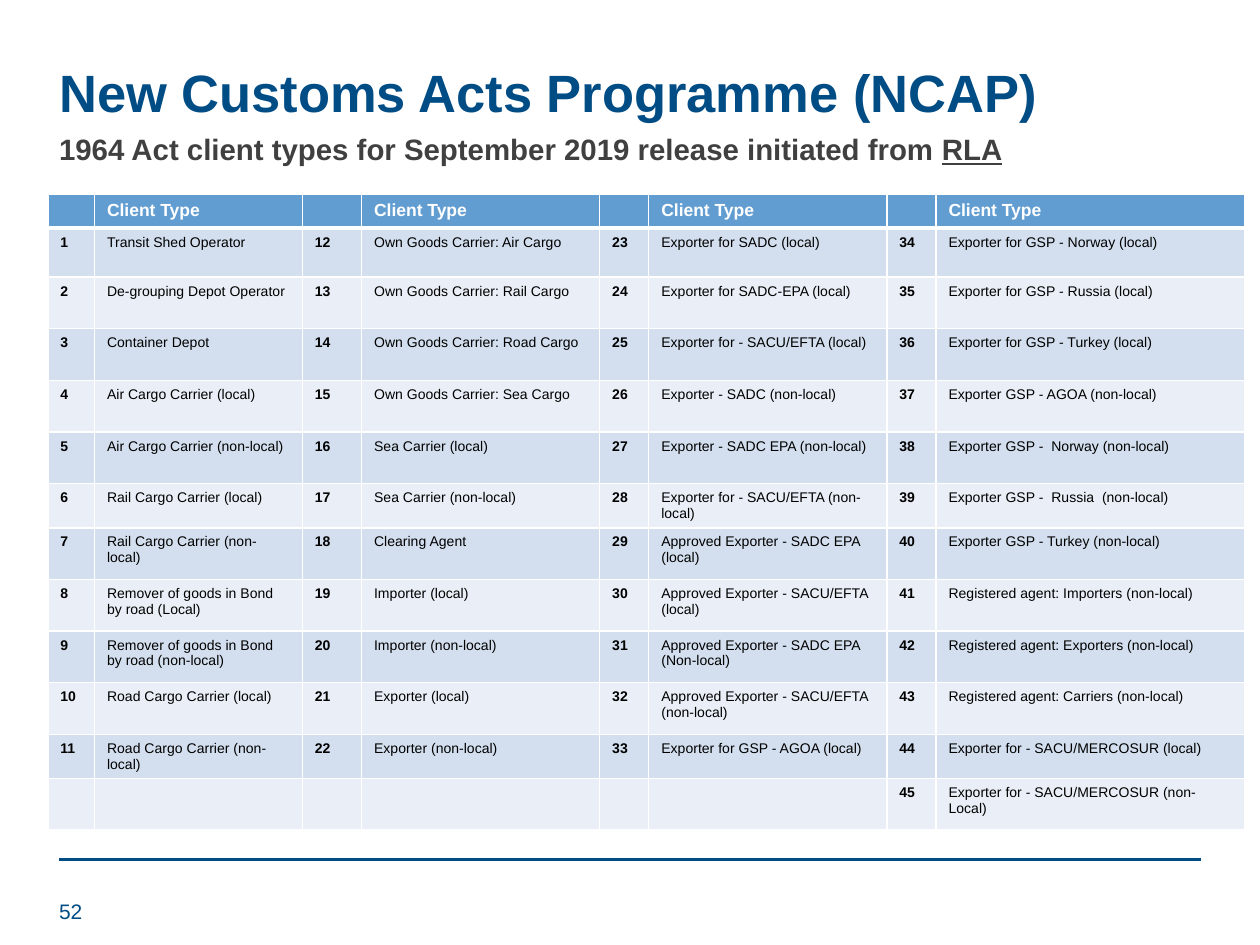
from lxml import etree
from pptx import Presentation
from pptx.dml.color import RGBColor
from pptx.enum import shapes, text
from pptx.oxml.ns import qn
from pptx.util import Inches, Pt

NAVY = RGBColor(0x00, 0x4C, 0x85)
GREY = RGBColor(0x40, 0x40, 0x40)
BLACK = RGBColor(0x00, 0x00, 0x00)
WHITE = RGBColor(0xFF, 0xFF, 0xFF)
HEADER_BLUE = RGBColor(0x62, 0x9D, 0xD1)
BAND_DARK = RGBColor(0xD3, 0xDF, 0xEE)
BAND_LIGHT = RGBColor(0xEA, 0xEF, 0xF7)

COLUMN_WIDTHS = [0.37, 1.65, 0.47, 1.89, 0.39, 1.89, 0.39, 2.45]
HEADER_HEIGHT, FIRST_HEIGHT, ROW_HEIGHT, TIGHT_HEIGHT = 0.24, 0.39, 0.41, 0.35
TIGHT_ROWS = (6, 11)

CLIENT_TYPES = [
    ["Transit Shed Operator", "De-grouping Depot Operator", "Container Depot",
     "Air Cargo Carrier (local)", "Air Cargo Carrier (non-local)",
     "Rail Cargo Carrier (local)", "Rail Cargo Carrier (non-local)",
     "Remover of goods in Bond  by road (Local)",
     "Remover of goods in Bond by road (non-local)",
     "Road Cargo Carrier (local)", "Road Cargo Carrier (non-local)"],
    ["Own Goods Carrier: Air Cargo", "Own Goods Carrier: Rail Cargo",
     "Own Goods Carrier: Road Cargo", "Own Goods Carrier: Sea Cargo",
     "Sea Carrier (local)", "Sea Carrier (non-local)", "Clearing Agent",
     "Importer (local)", "Importer (non-local)",
     "Exporter (local)", "Exporter (non-local)"],
    ["Exporter for SADC (local)", "Exporter for SADC-EPA (local)",
     "Exporter for - SACU/EFTA (local)", "Exporter - SADC (non-local)",
     "Exporter - SADC EPA (non-local)", "Exporter for - SACU/EFTA (non-local)",
     "Approved Exporter - SADC EPA (local)",
     "Approved Exporter - SACU/EFTA (local)",
     "Approved Exporter - SADC EPA (Non-local)",
     "Approved Exporter - SACU/EFTA  (non-local)",
     "Exporter for GSP - AGOA (local)"],
    ["Exporter for GSP - Norway (local)", "Exporter for GSP - Russia (local)",
     "Exporter for GSP - Turkey (local)", "Exporter GSP - AGOA (non-local)",
     "Exporter GSP -  Norway (non-local)", "Exporter GSP -  Russia  (non-local)",
     "Exporter GSP - Turkey (non-local)",
     "Registered agent: Importers (non-local)",
     "Registered agent: Exporters (non-local)",
     "Registered agent: Carriers (non-local)",
     "Exporter for - SACU/MERCOSUR (local)",
     "Exporter for - SACU/MERCOSUR (non-Local)"],
]


def add_run(paragraph, wording, size, color, bold=False, underline=None):
    run = paragraph.add_run()
    run.text = wording
    font = run.font
    font.name, font.size, font.bold = "Arial", Pt(size), bold
    font.underline = underline
    font.color.rgb = color


def prepare_frame(holder, left, top, width, height, anchor=text.MSO_ANCHOR.TOP,
                  line_spacing=None):
    """Place a text holder and return its first paragraph, ready for runs."""
    holder.left, holder.top = Inches(left), Inches(top)
    holder.width, holder.height = Inches(width), Inches(height)
    frame = holder.text_frame
    frame.word_wrap = True
    frame.auto_size = text.MSO_AUTO_SIZE.NONE
    frame.vertical_anchor = anchor
    paragraph = frame.paragraphs[0]
    paragraph.alignment = text.PP_ALIGN.LEFT
    paragraph.line_spacing = line_spacing
    return paragraph


def set_borders(cell, top, bottom):
    """Draw white cell borders; top and bottom are widths in points."""
    properties = cell._tc.get_or_add_tcPr()
    for side, width in (("L", 1), ("R", 1), ("T", top), ("B", bottom)):
        line = etree.SubElement(properties, qn(f"a:ln{side}"), w=str(Pt(width)))
        fill = etree.SubElement(line, qn("a:solidFill"))
        etree.SubElement(fill, qn("a:srgbClr"), val=str(WHITE))


def fill_cell(cell, wording, fill, size, color, bold, top=1, bottom=1):
    set_borders(cell, top, bottom)
    cell.fill.solid()
    cell.fill.fore_color.rgb = fill
    paragraph = cell.text_frame.paragraphs[0]
    if wording:
        add_run(paragraph, wording, size, color, bold)
    else:
        etree.SubElement(paragraph._p, qn("a:endParaRPr"), sz=str(size * 100))


def row_height(row):
    if row in TIGHT_ROWS:
        return TIGHT_HEIGHT
    return {0: HEADER_HEIGHT, 1: FIRST_HEIGHT}.get(row, ROW_HEIGHT)


def add_client_table(slide):
    row_count = 1 + max(len(block) for block in CLIENT_TYPES)
    heights = [row_height(row) for row in range(row_count)]
    table = slide.shapes.add_table(
        row_count, len(COLUMN_WIDTHS), Inches(0.38), Inches(1.54),
        Inches(sum(COLUMN_WIDTHS)), Inches(sum(heights))).table
    for column, width in zip(table.columns, COLUMN_WIDTHS):
        column.width = Inches(width)
    for row, height in zip(table.rows, heights):
        row.height = Inches(height)

    first_number = 1
    for block, client_types in enumerate(CLIENT_TYPES):
        number_column, type_column = 2 * block, 2 * block + 1
        for column, heading in ((number_column, ""), (type_column, "Client Type")):
            fill_cell(table.cell(0, column), heading, HEADER_BLUE, 10, WHITE,
                      True, bottom=3)
        for row in range(1, row_count):
            number = client_type = ""
            if row <= len(client_types):
                number = str(first_number + row - 1)
                client_type = client_types[row - 1]
            band = BAND_DARK if row % 2 else BAND_LIGHT
            top = 3 if row == 1 else 1
            fill_cell(table.cell(row, number_column), number, band, 8, BLACK,
                      True, top)
            fill_cell(table.cell(row, type_column), client_type, band, 8, BLACK,
                      False, top)
        first_number += len(client_types)


def add_footer_rule(slide):
    rule = slide.shapes.add_connector(
        shapes.MSO_CONNECTOR.STRAIGHT,
        Inches(0.47), Inches(6.82), Inches(9.53), Inches(6.82))
    rule.line.color.rgb = NAVY
    rule.line.width = Pt(2)
    etree.SubElement(rule._element.spPr, qn("a:effectLst"))


def main():
    deck = Presentation()
    deck.slide_width, deck.slide_height = Inches(10), Inches(7.5)
    slide = deck.slides.add_slide(deck.slide_layouts[5])

    add_footer_rule(slide)
    page_number = prepare_frame(slide.shapes.add_textbox(0, 0, 0, 0),
                                0.37, 7.03, 2.25, 0.4, text.MSO_ANCHOR.MIDDLE)
    add_run(page_number, "52", 12, NAVY)

    title = prepare_frame(slide.shapes.title, 0.37, 0.48, 8.62, 0.58,
                          line_spacing=0.9)
    add_run(title, "New Customs Acts Programme (NCAP)", 30, NAVY, bold=True)

    subtitle = prepare_frame(slide.shapes.add_textbox(0, 0, 0, 0),
                             0.37, 1.07, 8.62, 0.48, line_spacing=0.7)
    add_run(subtitle,
            "1964 Act client types for September 2019 release initiated from ",
            16.8, GREY, bold=True)
    add_run(subtitle, "RLA", 16.8, GREY, bold=True, underline=True)

    add_client_table(slide)
    deck.save("out.pptx")


if __name__ == "__main__":
    main()
